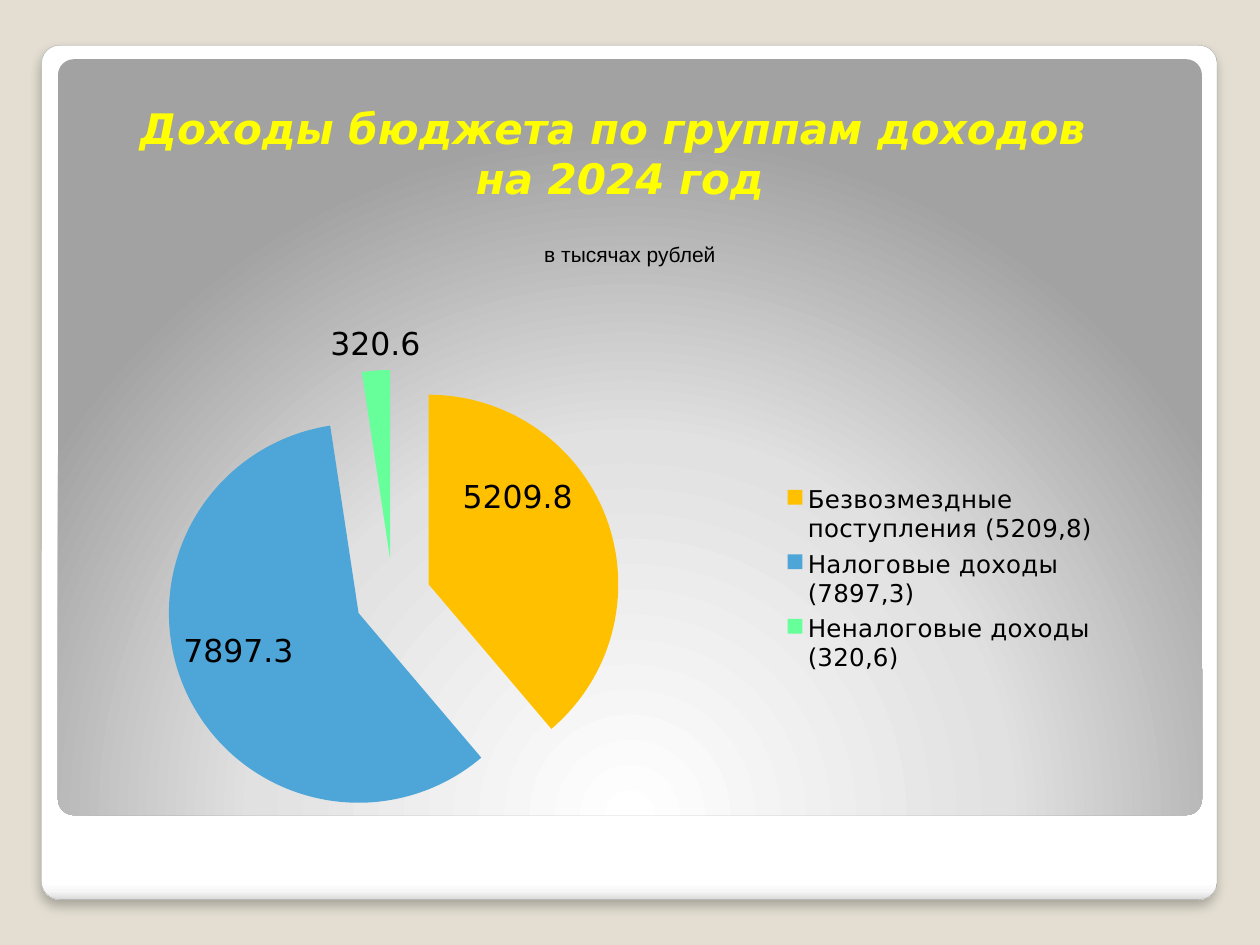
from lxml.etree import SubElement, fromstring
from pptx import Presentation
from pptx.chart.data import CategoryChartData
from pptx.dml.color import RGBColor
from pptx.enum.chart import XL_CHART_TYPE, XL_LABEL_POSITION, XL_LEGEND_POSITION
from pptx.enum.shapes import MSO_SHAPE
from pptx.enum.text import MSO_ANCHOR, PP_ALIGN
from pptx.oxml import parse_xml
from pptx.oxml.ns import nsdecls, qn
from pptx.util import Inches, Pt

TITLE = ["Доходы бюджета по группам доходов ", "на 2024 год"]
UNITS = "в тысячах рублей"
INCOME = [
    ("Безвозмездные поступления (5209,8)", 5209.8, "grants"),
    ("Налоговые доходы (7897,3)", 7897.3, "taxes"),
    ("Неналоговые доходы (320,6)", 320.6, "other"),
]
LABELS = [
    (XL_LABEL_POSITION.CENTER, (0, -0.1)),
    (XL_LABEL_POSITION.CENTER, (-0.03, 0)),
    (XL_LABEL_POSITION.OUTSIDE_END, None),
]
COLORS = {
    "background": "E3DED1", "edge": "A4A4A4", "title": "FFFF00", "text": "000000",
    "grants": "FFC000", "taxes": "4EA5D8", "other": "66FF99",
}
CARD_STOPS = [(0, "FFFFFF"), (98, "FFFFFF"), (99, "F7F7F7"), (100, "DADADA")]
PANEL_STOPS = [(0, "FFFFFF"), (55, "E1E1E1"), (100, "A2A2A2")]
DOWNWARD = '<a:lin ang="5400000" scaled="0"/>'
FROM_BELOW = ('<a:path path="circle"><a:fillToRect l="50000" t="175000" '
              'r="50000" b="-75000"/></a:path>')
SHADOW = ('<a:outerShdw %s blurRad="76200" dist="50800" dir="5400000" algn="t" rotWithShape="0">'
          '<a:srgbClr val="000000"><a:alpha val="25000"/></a:srgbClr></a:outerShdw>')
HEADING_FONT, UNITS_FONT = "DejaVu Sans", "Arial"
WIDTH, HEIGHT = 10, 7.5
CORNER = 0.021


def color(key):
    return RGBColor.from_string(COLORS[key])


def style(font, name, size, key):
    font.name, font.size = name, Pt(size)
    font.color.rgb = color(key)


def rounded(slide, left, top, width, height):
    box = slide.shapes.add_shape(
        MSO_SHAPE.ROUNDED_RECTANGLE, *map(Inches, (left, top, width, height)))
    box.adjustments[0] = CORNER
    box.shadow.inherit = False
    box.fill.background()
    box.line.fill.background()
    return box


def apply_gradient(box, stops, direction):
    marks = "".join(f'<a:gs pos="{share * 1000}"><a:srgbClr val="{tone}"/></a:gs>'
                    for share, tone in stops)
    gradient = parse_xml(f'<a:gradFill {nsdecls("a")} rotWithShape="1">'
                         f'<a:gsLst>{marks}</a:gsLst>{direction}</a:gradFill>')
    properties = box.element.spPr
    properties.replace(properties.find(qn("a:noFill")), gradient)


def manual_layout(**settings):
    layout = fromstring(f'<c:layout {nsdecls("c")}/>')
    manual = SubElement(layout, qn("c:manualLayout"))
    for tag, value in settings.items():
        SubElement(manual, qn(f"c:{tag}")).set("val", str(value))
    return layout


def place(part, anchor, **settings):
    for old in part.findall(qn("c:layout")):
        part.remove(old)
    layout = manual_layout(**settings)
    if anchor is None:
        part.insert(0, layout)
    else:
        part.find(qn(anchor)).addnext(layout)


def add_frame(slide):
    card = rounded(slide, 0.33, 0.36, 9.33, 6.78)
    apply_gradient(card, CARD_STOPS, DOWNWARD)
    card.line.color.rgb = color("edge")
    card.line.width = Pt(0.16)
    card.element.spPr.find(qn("a:effectLst")).append(parse_xml(SHADOW % nsdecls("a")))
    panel = rounded(slide, 0.46, 0.47, 9.08, 6)
    apply_gradient(panel, PANEL_STOPS, FROM_BELOW)


def add_title(slide):
    heading = rounded(slide, 0.78, 0.39, 8.28, 1.64).text_frame
    heading.word_wrap = True
    heading.vertical_anchor = MSO_ANCHOR.MIDDLE
    heading.text = "\n".join(TITLE)
    for line in heading.paragraphs:
        line.alignment = PP_ALIGN.CENTER
        font = line.runs[0].font
        style(font, HEADING_FONT, 24, "title")
        font.bold = font.italic = True


def add_income_pie(slide):
    income = CategoryChartData()
    income.categories = [name for name, _, _ in INCOME]
    income.add_series("Доходы", [value for _, value, _ in INCOME])
    chart = slide.shapes.add_chart(
        XL_CHART_TYPE.PIE, *map(Inches, (0.39, 2.42, 8.95, 4.3)), income).chart
    chart.has_title = False
    style(chart.font, HEADING_FONT, 18, "text")
    chart.has_legend = True
    legend = chart.legend
    legend.position = XL_LEGEND_POSITION.RIGHT
    legend.include_in_layout = False
    style(legend.font, HEADING_FONT, 14, "text")
    place(legend._element, "c:legendPos", xMode="edge", yMode="edge",
          x=0.64, y=0.32, w=0.3, h=0.37)

    pie = chart.plots[0]
    pie.vary_by_categories = True
    pie.has_data_labels = True
    pie.data_labels.show_value = True
    pie.data_labels.show_percentage = False
    style(pie.data_labels.font, HEADING_FONT, 18, "text")
    series = pie.series[0]
    for index, ((_, _, key), (position, shift)) in enumerate(zip(INCOME, LABELS)):
        point = series.points[index]
        point.format.fill.solid()
        point.format.fill.fore_color.rgb = color(key)
        point.format.line.fill.background()
        label = point.data_label
        style(label.font, HEADING_FONT, 18, "text")
        label.position = position
        if shift:
            mark = series._element.find(qn("c:dLbls")).findall(qn("c:dLbl"))[index]
            place(mark, "c:idx", x=shift[0], y=shift[1])
    explosion = fromstring(f'<c:explosion {nsdecls("c")} val="20"/>')
    series._element.find(qn("c:dPt")).addprevious(explosion)
    plot_area = chart._chartSpace.chart.plotArea
    place(plot_area, None, layoutTarget="inner", xMode="edge", yMode="edge",
          x=0.1, y=0.12, w=0.41, h=0.84)


def add_units(slide):
    units = slide.shapes.add_textbox(*map(Inches, (4.22, 1.87, 1.56, 0.3))).text_frame
    units.word_wrap = False
    units.text = UNITS
    units.paragraphs[0].alignment = PP_ALIGN.CENTER
    style(units.paragraphs[0].runs[0].font, UNITS_FONT, 12, "text")


def main():
    deck = Presentation()
    deck.slide_width, deck.slide_height = Inches(WIDTH), Inches(HEIGHT)
    slide = deck.slides.add_slide(deck.slide_layouts[6])
    slide.background.fill.solid()
    slide.background.fill.fore_color.rgb = color("background")
    add_frame(slide)
    add_title(slide)
    add_income_pie(slide)
    add_units(slide)
    deck.save("out.pptx")


if __name__ == "__main__":
    main()
